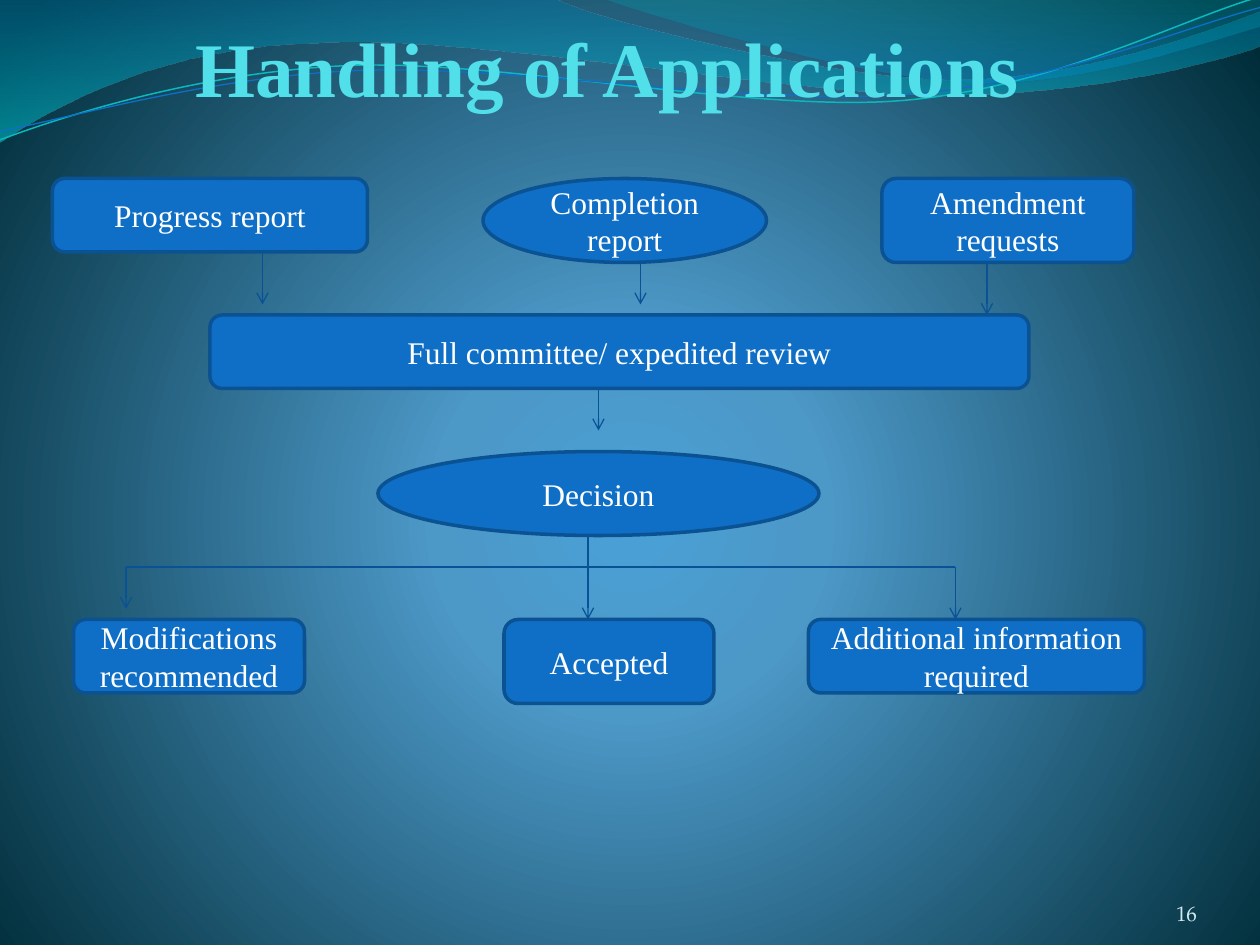
from dataclasses import dataclass
from math import cos, radians, sin
from typing import Optional

from pptx import Presentation
from pptx.dml.color import RGBColor
from pptx.enum.shapes import MSO_CONNECTOR, MSO_SHAPE
from pptx.enum.text import MSO_ANCHOR, PP_ALIGN
from pptx.oxml import parse_xml
from pptx.oxml.ns import nsdecls, qn
from pptx.util import Cm, Pt

COLORS = {
    "title": "51E0EA",
    "number": "D1EAEE",
    "text": "FFFFFF",
    "box": "0F6FC6",
    "border": "0B5292",
    "arrow": "095295",
    "teal": "0AB8BF",
}
FONT = "Times New Roman"
GRID = 25.4 / 120
TILT = -2.7
PIVOT = (4.99, 0.58)
DOWNWARD = '<a:lin ang="5400000" scaled="0"/>'
RADIAL = ('<a:path path="circle"><a:fillToRect l="10000" t="110000" '
          'r="10000" b="100000"/></a:path>')
BACKGROUND = [(0, "4AA0D6", 100), (25, "4C98C7", 100), (100, "002C38", 100)]


@dataclass
class Box:
    text: str
    left: int
    top: int
    width: int
    height: int
    shape: MSO_SHAPE = MSO_SHAPE.ROUNDED_RECTANGLE


@dataclass
class Link:
    x1: int
    y1: int
    x2: int
    y2: int
    arrow: bool = True


@dataclass
class Wave:
    start: tuple
    segments: list
    gradient: Optional[list] = None
    line: Optional[str] = None
    width: float = 0.75


WAVES = [
    Wave((0, 0), [
        [(4.4, -0.01)],
        [(4.76, 0.17), (6.64, 0.63), (7.58, 0.63)],
        [(8.53, 0.63), (9.58, 0.26), (10, 0.09)],
        [(10.01, 0.36)],
        [(9.83, 0.44), (8.7, 0.76), (7.46, 0.75)],
        [(6.22, 0.75), (3.82, 0.28), (2.57, 0.34)],
        [(1.29, 0.36), (0.46, 0.83), (-0.01, 1.13)],
        [(0, 0)],
    ], gradient=[(0, "0074A1", 45), (100, "00C6CF", 55)]),
    Wave((4.79, -0.01), [
        [(5.09, 0.11), (6.82, 0.62), (7.69, 0.65)],
        [(8.56, 0.69), (9.61, 0.32), (10, 0.21)],
        [(10, 0)],
        [(4.79, -0.01)],
    ], gradient=[(0, "00A1A9", 30), (80, "008BBF", 45)]),
    Wave((0, 1.11), [
        [(0.48, 0.93), (1.58, 0.57), (2.77, 0.52)],
        [(3.95, 0.47), (5.93, 0.89), (7.13, 0.8)],
        [(8.33, 0.71), (9.38, 0.15), (9.98, -0.02)],
    ], line="teal", width=0.85),
    Wave((0, 1.04), [
        [(0.47, 0.96), (1.64, 0.61), (2.83, 0.56)],
        [(4.03, 0.51), (5.97, 0.84), (7.17, 0.75)],
        [(8.36, 0.67), (9.41, 0.21), (10, 0.06)],
    ], line="box"),
]

BOXES = [
    Box("Progress report", 5, 17, 30, 7),
    Box("Full committee/ expedited review", 20, 30, 78, 7),
    Box("Modifications recommended", 7, 59, 22, 7),
    Box("Completion report", 46, 17, 27, 8, MSO_SHAPE.OVAL),
    Box("Decision", 36, 43, 42, 8, MSO_SHAPE.OVAL),
    Box("Amendment requests", 84, 17, 24, 8),
    Box("Accepted", 48, 59, 20, 8),
    Box("Additional information required", 77, 59, 32, 7),
]

LINKS = [
    Link(25, 24, 25, 29),
    Link(12, 54, 12, 58),
    Link(61, 25, 61, 29),
    Link(57, 37, 57, 41),
    Link(56, 51, 56, 54, arrow=False),
    Link(12, 54, 91, 54, arrow=False),
    Link(56, 54, 56, 59),
    Link(91, 54, 91, 59),
    Link(94, 25, 94, 30),
]


def rgb(name: str) -> RGBColor:
    return RGBColor.from_string(COLORS[name])


def grid(*values: int) -> list:
    return [Cm(v * GRID) for v in values]


def to_emu(point: tuple, angle: float) -> tuple:
    dx, dy = point[0] - PIVOT[0], point[1] - PIVOT[1]
    c, n = cos(radians(angle)), sin(radians(angle))
    return (Cm((PIVOT[0] + dx * c - dy * n) * 2.54),
            Cm((PIVOT[1] + dx * n + dy * c) * 2.54))


def set_gradient(fill, props, stops: list, direction: str) -> None:
    fill.background()
    gs = "".join(
        f'<a:gs pos="{pos * 1000}"><a:srgbClr val="{color}">'
        f'<a:alpha val="{alpha * 1000}"/></a:srgbClr></a:gs>'
        for pos, color, alpha in stops)
    props.replace(props.find(qn("a:noFill")), parse_xml(
        f'<a:gradFill {nsdecls("a")} rotWithShape="1">'
        f'<a:gsLst>{gs}</a:gsLst>{direction}</a:gradFill>'))


def bend(sp, segments: list) -> None:
    lines = iter(list(sp._element.iter(qn("a:lnTo"))))
    for seg in segments:
        first, *rest = [next(lines) for _ in seg]
        if rest:
            curve = parse_xml(f'<a:cubicBezTo {nsdecls("a")}/>')
            first.addprevious(curve)
            for line in (first, *rest):
                curve.append(line[0])
                line.getparent().remove(line)


def add_wave(s, master, wave: Wave, number: int) -> None:
    angle = TILT if wave.line else 0
    builder = s.shapes.build_freeform(*to_emu(wave.start, -angle))
    builder.add_line_segments(
        [to_emu(p, -angle) for seg in wave.segments for p in seg],
        close=not wave.line)
    sp = builder.convert_to_shape()
    bend(sp, wave.segments)
    sp.rotation = angle
    sp.shadow.inherit = False
    if wave.gradient:
        set_gradient(sp.fill, sp._element.spPr, wave.gradient, DOWNWARD)
        sp.line.fill.background()
    else:
        sp.fill.background()
        sp.line.color.rgb = rgb(wave.line)
        sp.line.width = Pt(wave.width)
    sp._element.nvSpPr.cNvPr.set("id", str(number))
    master.shapes._spTree.append(sp._element)


def write(tf, text: str, font: str, size: float, color: str,
          align: PP_ALIGN, anchor: MSO_ANCHOR, bold: bool = False) -> None:
    tf.word_wrap = True
    tf.vertical_anchor = anchor
    p = tf.paragraphs[0]
    p.text = text
    p.alignment = align
    p.font.name = font
    p.font.size = Pt(size)
    p.font.bold = bold
    p.font.color.rgb = rgb(color)


def add_box(s, box: Box) -> None:
    sp = s.shapes.add_shape(
        box.shape, *grid(box.left, box.top, box.width, box.height))
    sp.shadow.inherit = False
    sp.fill.solid()
    sp.fill.fore_color.rgb = rgb("box")
    sp.line.color.rgb = rgb("border")
    sp.line.width = Pt(2)
    write(sp.text_frame, box.text, FONT, 18, "text",
          PP_ALIGN.CENTER, MSO_ANCHOR.MIDDLE)


def add_link(s, link: Link) -> None:
    cx = s.shapes.add_connector(
        MSO_CONNECTOR.STRAIGHT, *grid(link.x1, link.y1, link.x2, link.y2))
    cx.line.color.rgb = rgb("arrow")
    cx.line.width = Pt(0.75)
    if link.arrow:
        cx.line._get_or_add_ln().append(
            parse_xml(f'<a:tailEnd {nsdecls("a")} type="arrow"/>'))
    cx._element.spPr.append(parse_xml(f'<a:effectLst {nsdecls("a")}/>'))


def set_margins(tf, left: float = 0, bottom: float = 0) -> None:
    tf.margin_top = tf.margin_right = 0
    tf.margin_left, tf.margin_bottom = Cm(left), Cm(bottom)


def main() -> None:
    prs = Presentation()
    prs.slide_width, prs.slide_height = Cm(25.4), Cm(19.05)
    s = prs.slides.add_slide(prs.slide_layouts[5])
    fill = s.background.fill
    set_gradient(fill, s._element.cSld.bg.bgPr, BACKGROUND, RADIAL)
    for number, wave in enumerate(WAVES, start=20):
        add_wave(s, prs.slide_master, wave, number)

    title = s.shapes.title
    title.left, title.top, title.width, title.height = (
        Cm(1.06), Cm(0.43), Cm(22.02), Cm(1.9))
    set_margins(title.text_frame, left=0.36, bottom=0.06)
    write(title.text_frame, "Handling of Applications", FONT, 44.1, "title",
          PP_ALIGN.CENTER, MSO_ANCHOR.BOTTOM, bold=True)

    page = s.shapes.add_textbox(Cm(22.02), Cm(17.65), Cm(2.11), Cm(1.02))
    set_margins(page.text_frame)
    write(page.text_frame, "16", "TeX Gyre Pagella", 12, "number",
          PP_ALIGN.RIGHT, MSO_ANCHOR.BOTTOM)

    for link in LINKS:
        add_link(s, link)
    for box in BOXES:
        add_box(s, box)
    prs.save("out.pptx")


if __name__ == "__main__":
    main()
